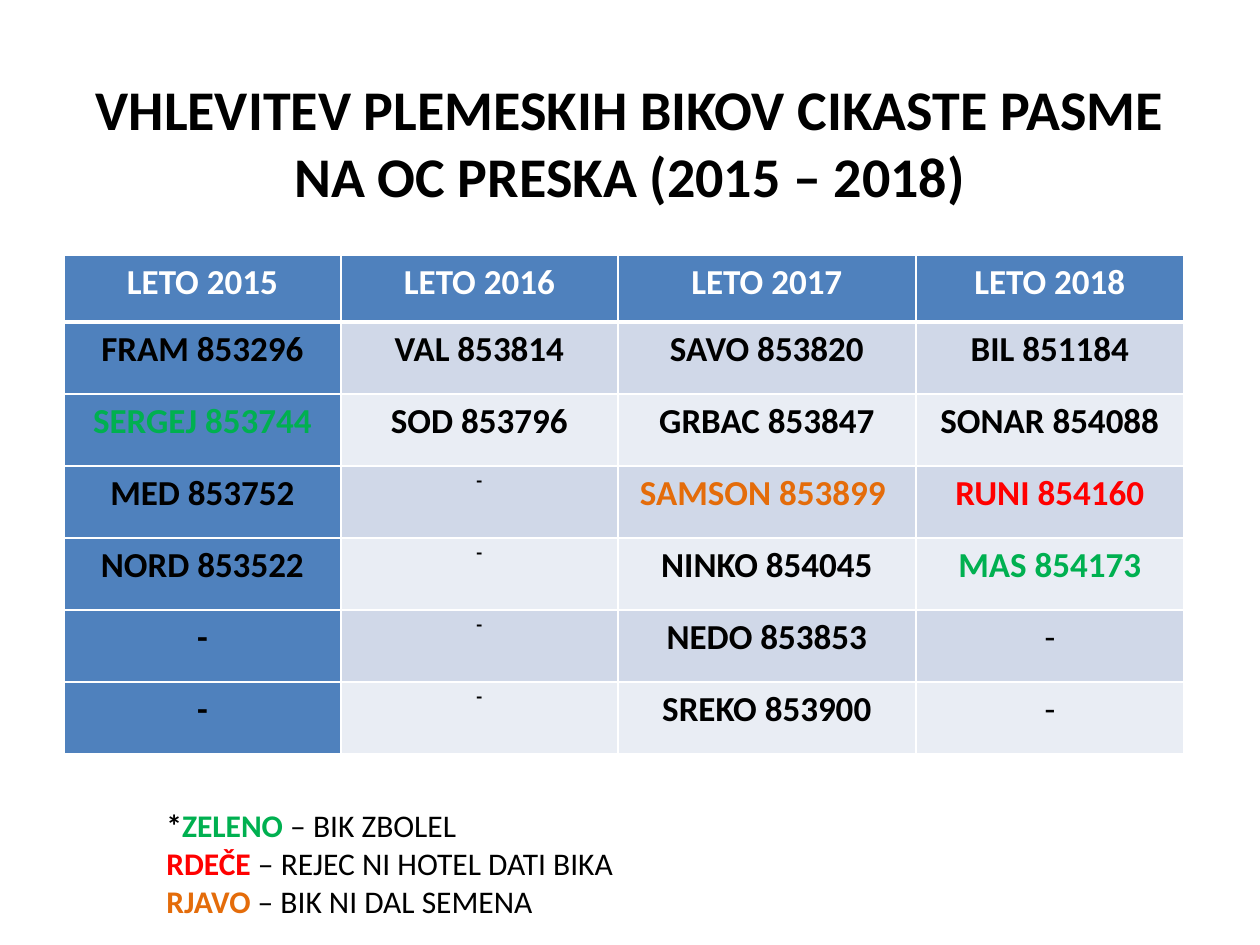
import pptx
import pptx.dml.color
import pptx.enum.text
import pptx.oxml
import pptx.oxml.ns
import pptx.util

# Content
TITLE = "VHLEVITEV PLEMESKIH BIKOV CIKASTE PASME NA OC PRESKA (2015 – 2018)"
HEADER = ["LETO 2015", "LETO 2016", "LETO 2017", "LETO 2018"]
BULLS = [
    ["FRAM 853296", "VAL 853814", "SAVO 853820", "BIL 851184"],
    ["SERGEJ 853744", "SOD 853796", "GRBAC 853847", "SONAR 854088"],
    ["MED 853752", "-", "SAMSON 853899 ", "RUNI 854160"],
    ["NORD 853522", "-", "NINKO 854045", "MAS 854173"],
    ["-", "-", "NEDO 853853", "-"],
    ["-", "-", "SREKO 853900", "-"],
]
STATUS = {
    "SERGEJ 853744": "green",
    "MAS 854173": "green",
    "RUNI 854160": "red",
    "SAMSON 853899 ": "brown",
}
# Each legend line: (text, colour, bold) pieces
LEGEND = [
    [("*", "text", True), ("ZELENO", "green", True), (" – BIK ZBOLEL", "text", False)],
    [("RDEČE", "red", True), (" – REJEC NI HOTEL DATI BIKA", "text", False)],
    [("RJAVO ", "brown", True), ("– BIK NI DAL SEMENA", "text", False)],
]

THEME = {
    "font": "Calibri",
    "colors": {
        "text": "000000", "white": "FFFFFF", "accent": "4F81BD",
        "band_dark": "D0D8E8", "band_light": "E9EDF4",
        "green": "00B050", "red": "FF0000", "brown": "E46C0A",
    },
    "sizes": {"title": 32, "cell": 20, "small": 11, "legend": 18},
}

# Layout in px
PAGE = (1260, 945)
TITLE_AREA = (63, 38, 1134, 207)
TABLE_ORIGIN = (64, 255)
COLUMN_WIDTHS = [277, 277, 298, 268]
HEADER_HEIGHT, ROW_HEIGHT = 67, 72
CELL_MARGIN = 9
LEGEND_AREA = (154, 800, 476, 127)
EMU_PER_PX = 914400 / 126


def px(*values):
    return [pptx.util.Emu(round(value * EMU_PER_PX)) for value in values]


def rgb(name):
    return pptx.dml.color.RGBColor.from_string(THEME["colors"][name])


def add_text(para, text, *, size, color="text", bold=True):
    span = para.add_run()
    span.text = text
    span.font.name = THEME["font"]
    span.font.size = pptx.util.Pt(THEME["sizes"][size])
    span.font.bold = bold
    span.font.color.rgb = rgb(color)


def add_borders(cell, **widths):
    properties = cell._tc.get_or_add_tcPr()
    for side in "LRTB":
        width = pptx.util.Pt(widths.get(side, 1))
        properties.append(pptx.oxml.parse_xml(
            f'<a:ln{side} {pptx.oxml.ns.nsdecls("a")} w="{width}"><a:solidFill>'
            f'<a:srgbClr val="{THEME["colors"]["white"]}"/></a:solidFill></a:ln{side}>'))


def fill_cell(cell, text, row, column):
    # Header row and first column share the accent; the rest is banded
    header = row == 0
    add_borders(cell, T=3 if row == 1 else 1, B=3 if header else 1)
    if header or column == 0:
        fill = "accent"
    else:
        fill = "band_dark" if row % 2 else "band_light"
    cell.fill.solid()
    cell.fill.fore_color.rgb = rgb(fill)
    cell.margin_left, cell.margin_right = px(CELL_MARGIN, CELL_MARGIN)
    cell.margin_top = cell.margin_bottom = 0
    para = cell.text_frame.paragraphs[0]
    para.alignment = pptx.enum.text.PP_ALIGN.CENTER
    para.line_spacing = 1.15
    add_text(
        para, text,
        size="small" if text == "-" and column == 1 else "cell",
        color="white" if header else STATUS.get(text, "text"),
        bold=not (text == "-" and column == 3))


def add_title(page):
    box = page.shapes.title
    box.left, box.top, box.width, box.height = px(*TITLE_AREA)
    box.text_frame.word_wrap = True
    box.text_frame.vertical_anchor = pptx.enum.text.MSO_ANCHOR.MIDDLE
    para = box.text_frame.paragraphs[0]
    para.alignment = pptx.enum.text.PP_ALIGN.CENTER
    add_text(para, TITLE, size="title")


def add_bull_table(page):
    rows = [HEADER] + BULLS
    heights = [HEADER_HEIGHT] + [ROW_HEIGHT] * len(BULLS)
    table = page.shapes.add_table(
        len(rows), len(HEADER),
        *px(*TABLE_ORIGIN, sum(COLUMN_WIDTHS), sum(heights))).table
    table.first_col = True
    for column, width in zip(table.columns, px(*COLUMN_WIDTHS)):
        column.width = width
    for row, height in zip(table.rows, px(*heights)):
        row.height = height
    for r, texts in enumerate(rows):
        for c, text in enumerate(texts):
            fill_cell(table.cell(r, c), text, r, c)


def add_legend(page):
    frame = page.shapes.add_textbox(*px(*LEGEND_AREA)).text_frame
    frame.word_wrap = False
    frame.auto_size = pptx.enum.text.MSO_AUTO_SIZE.SHAPE_TO_FIT_TEXT
    for index, pieces in enumerate(LEGEND):
        para = frame.add_paragraph() if index else frame.paragraphs[0]
        for text, color, bold in pieces:
            add_text(para, text, size="legend", color=color, bold=bold)


def main():
    deck = pptx.Presentation()
    deck.slide_width, deck.slide_height = px(*PAGE)
    page = deck.slides.add_slide(deck.slide_layouts[5])
    add_title(page)
    add_bull_table(page)
    add_legend(page)
    deck.save("out.pptx")


if __name__ == "__main__":
    main()
